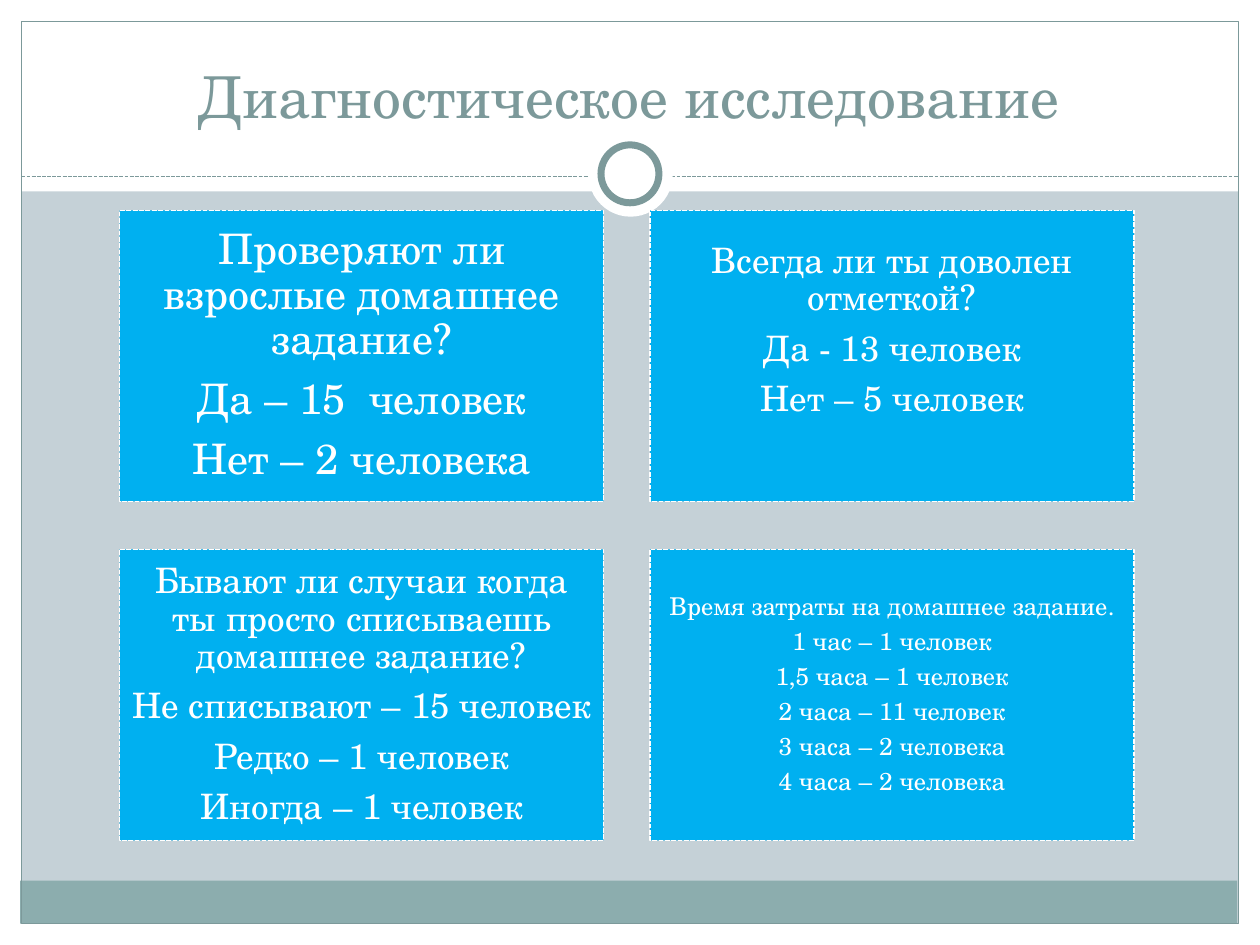
from dataclasses import dataclass

import pptx
import pptx.dml.color
import pptx.enum.dml
import pptx.enum.shapes
import pptx.enum.text
import pptx.oxml.ns
import pptx.util
from lxml import etree
from pptx.util import Inches

FONT = "TeX Gyre Schola"
WHITE, TEAL, BAND, BLUE, BACKDROP = "FFFFFF", "7C999A", "8CADAE", "00B0F0", "C5D1D7"
RECTANGLE = pptx.enum.shapes.MSO_SHAPE.RECTANGLE
OVAL = pptx.enum.shapes.MSO_SHAPE.OVAL
SYS_DASH = pptx.enum.dml.MSO_LINE.SQUARE_DOT
MIDDLE = pptx.enum.text.MSO_ANCHOR.MIDDLE
BOTTOM = pptx.enum.text.MSO_ANCHOR.BOTTOM


@dataclass
class Panel:
    left: float
    top: float
    width: float
    height: float
    fill: str | None = WHITE
    line: str | None = None
    line_width: float = 0.75
    dash: object = None
    kind: object = RECTANGLE


@dataclass
class Card:
    lines: list[str]
    size: int
    inset: float
    extra_bottom: float = 0


def paint(target, color: str) -> None:
    """Give a fill one solid colour."""
    target.solid()
    target.fore_color.rgb = pptx.dml.color.RGBColor.from_string(color)


def add_panel(page, panel: Panel):
    shape = page.shapes.add_shape(
        panel.kind, Inches(panel.left), Inches(panel.top),
        Inches(panel.width), Inches(panel.height))
    shape.shadow.inherit = False
    if panel.fill:
        paint(shape.fill, panel.fill)
    else:
        shape.fill.background()
    if panel.line:
        paint(shape.line.fill, panel.line)
        shape.line.width = pptx.util.Pt(panel.line_width)
        if panel.dash:
            shape.line.dash_style = panel.dash
    else:
        shape.line.fill.background()
    return shape


def write(box, lines: list[str], *, size: int, color: str, anchor,
          inset: float = 0.05, extra_bottom: float = 0,
          line_spacing: float = 1, space_after: float = 0) -> None:
    """Fill a shape with centred paragraphs."""
    frame = box.text_frame
    frame.word_wrap = True
    frame.vertical_anchor = anchor
    frame.margin_left = frame.margin_right = frame.margin_top = Inches(inset)
    frame.margin_bottom = Inches(inset + extra_bottom)
    for index, line in enumerate(lines):
        para = frame.add_paragraph() if index else frame.paragraphs[0]
        para.alignment = pptx.enum.text.PP_ALIGN.CENTER
        para.line_spacing = line_spacing
        para.space_after = pptx.util.Pt(space_after)
        span = para.add_run()
        span.text = line
        span.font.name = FONT
        span.font.size = pptx.util.Pt(size)
        paint(span.font.fill, color)


def add_divider(page, left: float, right: float, top: float) -> None:
    line = page.shapes.add_connector(
        pptx.enum.shapes.MSO_CONNECTOR.STRAIGHT,
        Inches(left), Inches(top), Inches(right), Inches(top))
    paint(line.line.fill, TEAL)
    line.line.width = pptx.util.Pt(0.75)
    line.line.dash_style = SYS_DASH
    etree.SubElement(line._element.spPr, pptx.oxml.ns.qn("a:effectLst"))


def add_card(page, card: Card, left: float, top: float) -> None:
    box = add_panel(page, Panel(left, top, 3.84, 2.31, BLUE, WHITE, 0.9, SYS_DASH))
    write(box, card.lines, size=card.size, color=WHITE, anchor=MIDDLE,
          inset=card.inset, extra_bottom=card.extra_bottom,
          line_spacing=0.9, space_after=0.35 * card.size)


FRAME = [
    Panel(0, 7.33, 10, 0.17),
    Panel(0, 0, 10, 1.52),
    Panel(0, 0, 0.17, 7.5),
    Panel(9.83, 0, 0.17, 7.5),
    Panel(0.16, 6.99, 9.66, 0.34, BAND),
    Panel(0.17, 0.17, 9.66, 7.16, None, TEAL),
]
RING = [
    Panel(4.67, 1.05, 0.67, 0.67, kind=OVAL),
    Panel(4.77, 1.15, 0.46, 0.46, line=TEAL, line_width=4, kind=OVAL),
]
CARDS = [
    Card(["Проверяют ли взрослые домашнее задание?",
          "Да – 15  человек", "Нет – 2 человека"], 24, 0.1),
    Card(["Всегда ли ты доволен отметкой?",
          "Да - 13 человек", "Нет – 5 человек"], 20, 0.08, extra_bottom=0.4),
    Card(["Бывают ли случаи когда ты просто списываешь домашнее задание?",
          "Не списывают – 15 человек", "Редко – 1 человек",
          "Иногда – 1 человек"], 20, 0.08),
    Card(["Время затраты на домашнее задание.", "1 час – 1 человек",
          "1,5 часа – 1 человек", "2 часа – 11 человек",
          "3 часа – 2 человека", "4 часа – 2 человека"], 14, 0.06),
]


def main() -> None:
    deck = pptx.Presentation()
    deck.slide_width, deck.slide_height = Inches(10), Inches(7.5)
    page = deck.slides.add_slide(deck.slide_layouts[6])
    paint(page.background.fill, BACKDROP)

    # Border, header and footer bands
    for panel in FRAME:
        add_panel(page, panel)
    add_divider(page, 0.17, 9.83, 1.4)
    for panel in RING:
        add_panel(page, panel)

    # Title
    title = page.shapes.add_textbox(
        Inches(0.33), Inches(0.25), Inches(9.33), Inches(0.83))
    write(title, ["Диагностическое исследование"], size=33, color=TEAL,
          anchor=BOTTOM)

    # Two by two grid of survey questions
    for index, card in enumerate(CARDS):
        row, column = divmod(index, 2)
        add_card(page, card, 0.95 + 4.21 * column, 1.67 + 2.69 * row)

    deck.save("out.pptx")


if __name__ == "__main__":
    main()
